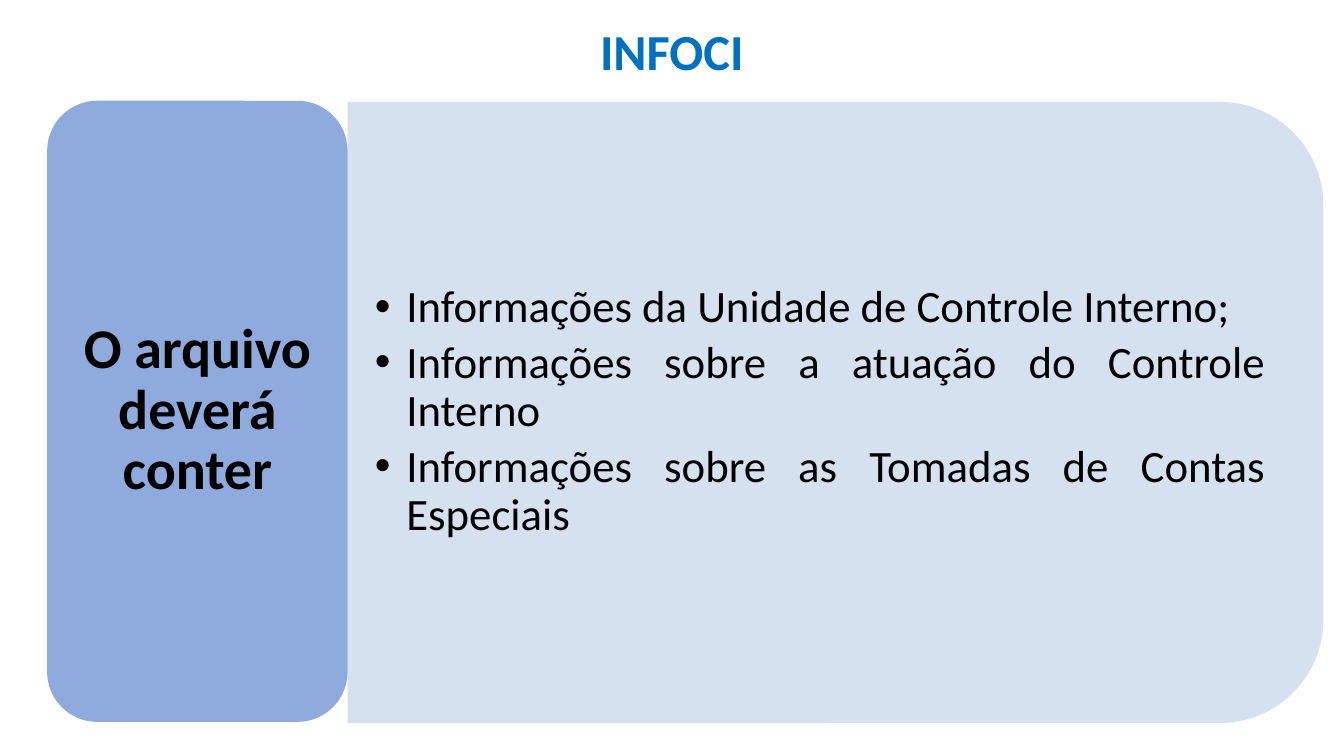
from dataclasses import dataclass

from lxml.etree import SubElement
from pptx import Presentation
from pptx.dml.color import RGBColor as Rgb
from pptx.enum.shapes import MSO_SHAPE as Kind
from pptx.enum.text import MSO_ANCHOR as Anchor, MSO_AUTO_SIZE as Fit, PP_ALIGN as Align
from pptx.oxml.ns import qn
from pptx.util import Cm, Pt


@dataclass(frozen=True)
class Theme:
    font: str = "Calibri"
    title: Rgb = Rgb(0x00, 0x70, 0xC0)
    ink: Rgb = Rgb(0, 0, 0)
    card: Rgb = Rgb(0x8F, 0xAA, 0xDC)
    panel: Rgb = Rgb(0xD2, 0xDE, 0xEF)
    head: Pt = Pt(36)
    label: Pt = Pt(40)
    item: Pt = Pt(32)


THEME = Theme()
ITEMS = (
    "Informações da Unidade de Controle Interno;",
    "Informações sobre a atuação do Controle Interno",
    "Informações sobre as Tomadas de Contas Especiais",
)


def style(para, size, color, bold=False):
    for run in para.runs:
        font = run.font
        font.name, font.size, font.bold = THEME.font, size, bold
        font.color.rgb = color


def add_title(slide, text):
    title = slide.shapes.title
    title.left, title.top = Cm(1.83), Cm(0.38)
    title.width, title.height = Cm(30.2), Cm(1.8)
    frame = title.text_frame
    frame.text = text
    frame.auto_size = Fit.NONE
    frame.vertical_anchor = Anchor.MIDDLE
    para = frame.paragraphs[0]
    para.alignment = Align.CENTER
    style(para, THEME.head, THEME.title, True)


def add_block(slide, kind, color, left, top, width, height):
    block = slide.shapes.add_shape(kind, left, top, width, height)
    block.shadow.inherit = False
    block.fill.solid()
    block.fill.fore_color.rgb = color
    block.line.fill.background()
    return block


def add_panel(slide, left, top, width, height):
    shift = (width - height) // 2
    panel = add_block(slide, Kind.ROUND_2_SAME_RECTANGLE, THEME.panel,
                      left + shift, top - shift, height, width)
    panel.rotation = 90
    tint = panel.fill._xPr.find(f".//{qn('a:srgbClr')}")
    SubElement(tint, qn("a:alpha"), val="90000")


def add_text(slide, lines, left, top, width, height, pad_x, pad_y):
    frame = slide.shapes.add_textbox(left, top, width, height).text_frame
    frame.word_wrap = True
    frame.vertical_anchor = Anchor.MIDDLE
    frame.margin_left = frame.margin_right = pad_x
    frame.margin_top = frame.margin_bottom = pad_y
    frame.text = "\n".join(lines)
    for para in frame.paragraphs:
        para.line_spacing = 0.9
    return frame.paragraphs


def add_bullet(para):
    props = para._p.get_or_add_pPr()
    indent = Cm(0.79)
    props.set("marL", str(indent))
    props.set("indent", str(-indent))
    SubElement(props, qn("a:buFont"), typeface="Arial")
    SubElement(props, qn("a:buChar"), char="•")


def add_label(slide, text, *box):
    para = add_text(slide, [text], *box, Cm(0.42), Cm(0.21))[0]
    para.alignment = Align.CENTER
    style(para, THEME.label, THEME.ink, True)


def add_list(slide, lines, *box):
    for para in add_text(slide, lines, *box, Cm(0.69), Cm(0.35)):
        para.level = 1
        para.alignment = Align.JUSTIFY
        para.space_after = Pt(5)
        add_bullet(para)
        style(para, THEME.item, THEME.ink)


def main():
    deck = Presentation()
    deck.slide_width, deck.slide_height = Cm(33.87), Cm(19.05)
    slide = deck.slides.add_slide(deck.slide_layouts[5])
    left, top, width, height = Cm(1.19), Cm(2.54), Cm(7.57), Cm(15.65)
    edge, inset = left + width, Cm(0.37)
    add_title(slide, "INFOCI")
    add_panel(slide, edge, top + Cm(0.03), Cm(24.59), height)
    add_list(slide, ITEMS, edge, Cm(3.33), Cm(23.83), Cm(14.12))
    add_block(slide, Kind.ROUNDED_RECTANGLE, THEME.card, left, top, width, height)
    add_label(slide, "O arquivo deverá conter", left + inset, top + inset,
              width - 2 * inset, height - 2 * inset)
    deck.save("out.pptx")


if __name__ == "__main__":
    main()
